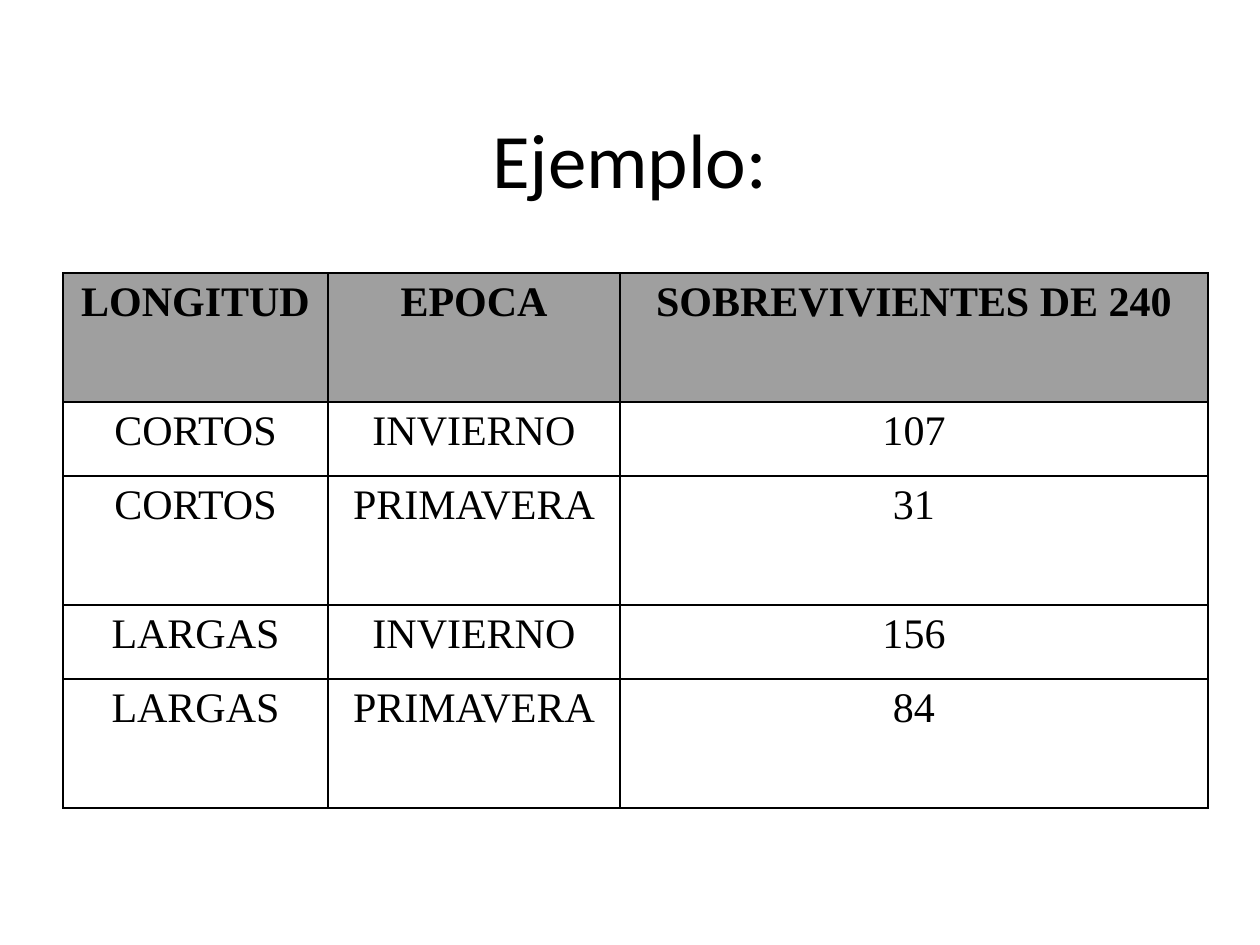
import dataclasses

import pptx
import pptx.dml.color
import pptx.enum.text
import pptx.oxml
import pptx.oxml.ns
import pptx.util

EMU_PER_PX = 914400 / 126


def px(length):
    return pptx.util.Emu(round(length * EMU_PER_PX))


@dataclasses.dataclass(frozen=True)
class Theme:
    ink: str = "000000"
    header_fill: str = "9F9F9F"
    title_font: str = "Calibri"
    table_font: str = "Times New Roman"
    title_size: int = 44
    table_size: int = 24
    border_width: int = 1
    hanging_indent: int = 48


class SlideBuilder:
    """Draws titles and bordered tables on a slide in one theme."""

    def __init__(self, slide, theme):
        self.slide = slide
        self.theme = theme

    def style_paragraph(self, paragraph, font_name, size, bold=False):
        paragraph.alignment = pptx.enum.text.PP_ALIGN.CENTER
        paragraph.font.name = font_name
        paragraph.font.size = pptx.util.Pt(size)
        paragraph.font.bold = bold
        paragraph.font.color.rgb = pptx.dml.color.RGBColor.from_string(self.theme.ink)

    def add_title(self, text, left, top, width, height):
        shape = self.slide.shapes.add_textbox(px(left), px(top), px(width), px(height))
        frame = shape.text_frame
        frame.word_wrap = True
        frame.vertical_anchor = pptx.enum.text.MSO_ANCHOR.MIDDLE
        frame.text = text
        self.style_paragraph(frame.paragraphs[0], self.theme.title_font, self.theme.title_size)

    def add_borders(self, cell):
        properties = cell._tc.get_or_add_tcPr()
        width = pptx.util.Pt(self.theme.border_width)
        for position, side in enumerate(("lnL", "lnR", "lnT", "lnB")):
            border = pptx.oxml.parse_xml(
                f'<a:{side} {pptx.oxml.ns.nsdecls("a")} w="{width}"><a:solidFill>'
                f'<a:srgbClr val="{self.theme.ink}"/></a:solidFill></a:{side}>'
            )
            properties.insert(position, border)

    def fill_cell(self, cell, text, is_header):
        cell.text = text
        paragraph = cell.text_frame.paragraphs[0]
        self.style_paragraph(paragraph, self.theme.table_font, self.theme.table_size, is_header)
        indent = px(self.theme.hanging_indent)
        properties = paragraph._p.get_or_add_pPr()
        properties.set("marL", str(indent))
        properties.set("indent", str(-indent))
        if is_header:
            cell.fill.solid()
            cell.fill.fore_color.rgb = pptx.dml.color.RGBColor.from_string(self.theme.header_fill)
        else:
            cell.fill.background()
        self.add_borders(cell)

    def add_table(self, rows, left, top, column_widths, row_heights):
        table = self.slide.shapes.add_table(
            len(rows), len(column_widths), px(left), px(top),
            px(sum(column_widths)), px(sum(row_heights)),
        ).table
        table.horz_banding = False
        for column, width in zip(table.columns, column_widths):
            column.width = px(width)
        for row, height in zip(table.rows, row_heights):
            row.height = px(height)
        for row_index, texts in enumerate(rows):
            for column_index, text in enumerate(texts):
                self.fill_cell(table.cell(row_index, column_index), text, row_index == 0)


def main():
    presentation = pptx.Presentation()
    presentation.slide_width = px(1260)
    presentation.slide_height = px(945)
    slide = presentation.slides.add_slide(presentation.slide_layouts[6])
    builder = SlideBuilder(slide, Theme())
    builder.add_title("Ejemplo:", 63, 63, 1134, 189)
    survivors = [
        ("LONGITUD", "EPOCA", "SOBREVIVIENTES DE 240"),
        ("CORTOS", "INVIERNO", "107"),
        ("CORTOS", "PRIMAVERA", "31"),
        ("LARGAS", "INVIERNO", "156"),
        ("LARGAS", "PRIMAVERA", "84"),
    ]
    tall, short = 129, 74
    builder.add_table(survivors, 63, 273, (265, 292, 588), (tall, short, tall, short, tall))
    presentation.save("out.pptx")


if __name__ == "__main__":
    main()
